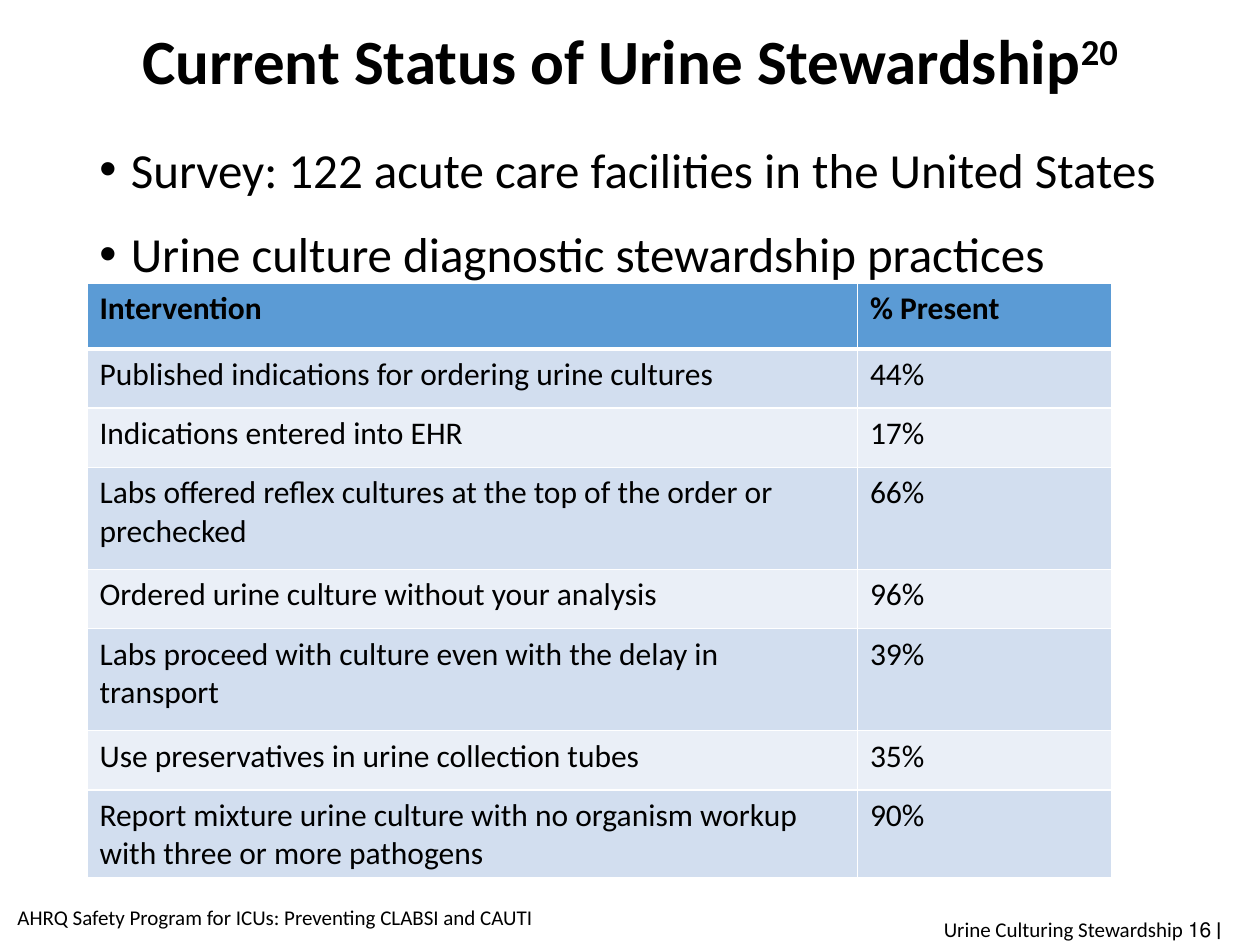
from dataclasses import dataclass
from typing import NamedTuple

from lxml.etree import SubElement as Sub
from pptx import Presentation
from pptx.dml.color import RGBColor
from pptx.enum.text import MSO_ANCHOR as Anchor, PP_ALIGN as Align
from pptx.oxml.ns import qn
from pptx.util import Inches, Pt

BLACK = RGBColor(0x00, 0x00, 0x00)
WHITE = RGBColor(0xFF, 0xFF, 0xFF)
BLUE = RGBColor(0x5B, 0x9B, 0xD5)
BANDS = (RGBColor(0xEA, 0xEF, 0xF7), RGBColor(0xD2, 0xDE, 0xEF))
FACE = "Calibri"
WIDE, HIGH = Inches(10), Inches(7.5)
ONE, TWO = 6.27, 10.8


class Row(NamedTuple):
    label: str
    value: str
    tall: float = ONE


@dataclass
class Box:
    left: float
    top: float
    width: float
    height: float

    def place(self) -> tuple[int, int, int, int]:
        """Turn percent shares of the slide into lengths."""
        return (share(self.left, WIDE), share(self.top, HIGH),
                share(self.width, WIDE), share(self.height, HIGH))


@dataclass
class Note:
    box: Box
    lines: list[str]
    size: int
    align: Align = Align.LEFT
    anchor: Anchor = Anchor.MIDDLE
    bold: bool = False
    pitch: float = 1.0
    bullet: bool = False


ROWS = [
    Row("Intervention", "% Present", 6.93),
    Row("Published indications for ordering urine cultures", "44%"),
    Row("Indications entered into EHR", "17%"),
    Row("Labs offered reflex cultures at the top of the order or prechecked", "66%", TWO),
    Row("Ordered urine culture without your analysis", "96%"),
    Row("Labs proceed with culture even with the delay in transport", "39%", TWO),
    Row("Use preservatives in urine collection tubes", "35%"),
    Row("Report mixture urine culture with no organism workup with three or more pathogens",
        "90%", 9.07),
]
TITLE = Note(Box(6.9, 0.13, 86.2, 11.87), ["Current Status of Urine Stewardship"], 36,
             Align.CENTER, bold=True, pitch=1.05)
BODY = Note(Box(6.9, 13.2, 86.2, 73.73),
            ["Survey: 122 acute care facilities in the United States",
             "Urine culture diagnostic stewardship practices"],
            28, anchor=Anchor.TOP, pitch=1.14, bullet=True)
LEFT = Note(Box(0, 94.4, 43.7, 5.33),
            ["AHRQ Safety Program for ICUs: Preventing CLABSI and CAUTI"], 12, Align.CENTER)
RIGHT = Note(Box(73.1, 95.6, 24.8, 5.33), ["Urine Culturing Stewardship "], 12, Align.RIGHT)
GRID = Box(6.9, 30, 81.3, sum(row.tall for row in ROWS))
COLS = (61.15, 20.15)


def share(part: float, whole: int) -> int:
    """Return a percentage of a length."""
    return round(whole * part / 100)


def style(para, size: int, bold: bool = False) -> None:
    """Set the font of a paragraph."""
    font = para.font
    font.name, font.size, font.bold = FACE, Pt(size), bold
    font.color.rgb = BLACK


def write(slide, note: Note):
    """Draw a text box and return its last paragraph."""
    frame = slide.shapes.add_textbox(*note.box.place()).text_frame
    frame.word_wrap = True
    frame.vertical_anchor = note.anchor
    for index, line in enumerate(note.lines):
        para = frame.add_paragraph() if index else frame.paragraphs[0]
        para.add_run().text = line
        para.alignment, para.line_spacing = note.align, note.pitch
        if index:
            para.space_before = Pt(10)
        if note.bullet:
            props = para._p.get_or_add_pPr()
            props.set("marL", str(Inches(0.25)))
            props.set("indent", str(-Inches(0.25)))
            Sub(props, qn("a:buFont"), typeface="Arial")
            Sub(props, qn("a:buChar"), char="•")
        style(para, note.size, note.bold)
    return para


def edge(cell, side: str, width: float) -> None:
    """Add a white border to one side of a cell."""
    line = Sub(cell._tc.get_or_add_tcPr(), qn(f"a:ln{side}"), w=str(Pt(width)))
    Sub(Sub(line, qn("a:solidFill")), qn("a:srgbClr"), val=str(WHITE))


def tabulate(slide) -> None:
    """Draw the table of interventions."""
    table = slide.shapes.add_table(len(ROWS), len(COLS), *GRID.place()).table
    for col, width in zip(table.columns, COLS):
        col.width = share(width, WIDE)
    for r, row in enumerate(ROWS):
        table.rows[r].height = share(row.tall, HIGH)
        for c, text in enumerate((row.label, row.value)):
            cell = table.cell(r, c)
            cell.text = text
            style(cell.text_frame.paragraphs[0], 18, r == 0)
            for side in "LRTB":
                heavy = (r, side) in ((0, "B"), (1, "T"))
                edge(cell, side, 3 if heavy else 1)
            cell.fill.solid()
            cell.fill.fore_color.rgb = BANDS[r % 2] if r else BLUE


def main() -> None:
    """Build the slide and save it."""
    deck = Presentation()
    deck.slide_width, deck.slide_height = WIDE, HIGH
    slide = deck.slides.add_slide(deck.slide_layouts[6])
    mark = write(slide, TITLE).add_run()
    mark.text = "20"
    mark.font._element.set("baseline", "30000")
    write(slide, BODY)
    tabulate(slide)
    write(slide, LEFT)
    page = write(slide, RIGHT)
    bar = page.add_run()
    bar.text, bar.font.name = "׀ ", "Roboto"
    page.add_run().text = "16"
    deck.save("out.pptx")


if __name__ == "__main__":
    main()
